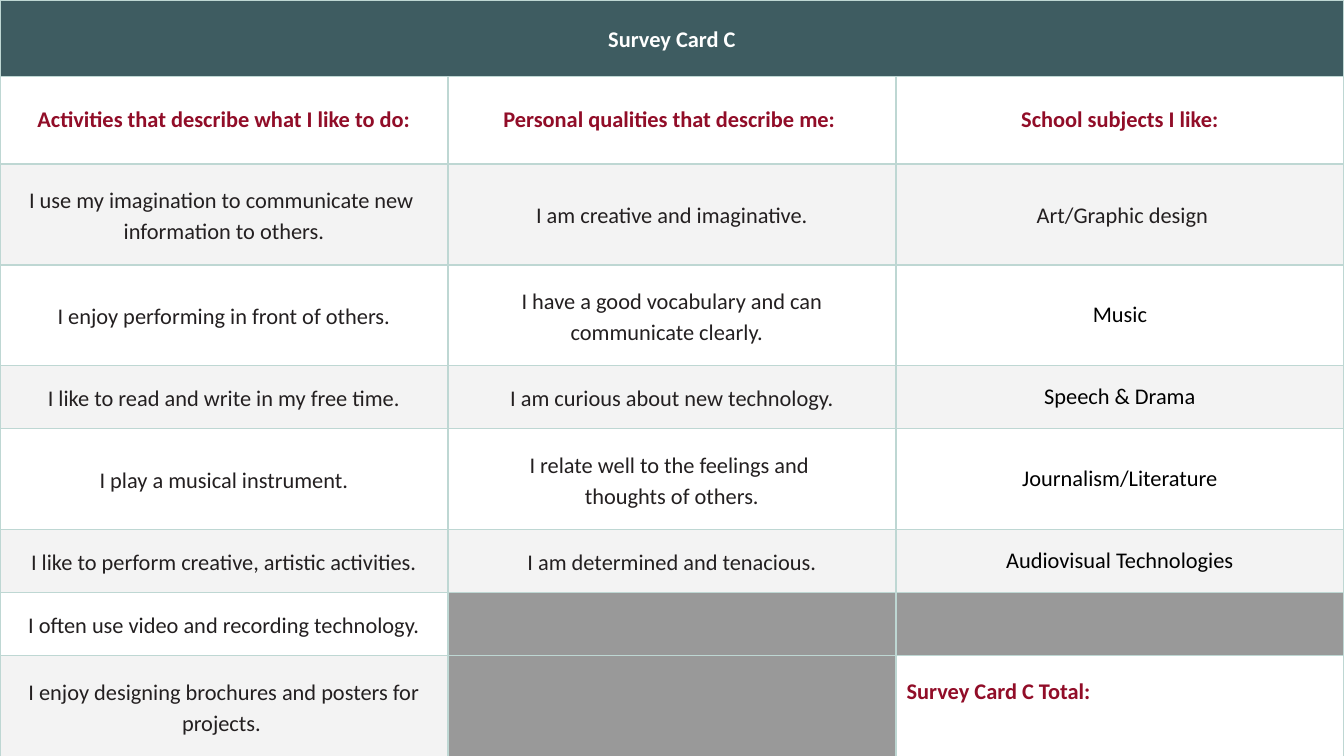
from dataclasses import dataclass
from typing import Optional

from lxml.etree import SubElement
from pptx import Presentation
from pptx.dml.color import RGBColor
from pptx.enum.text import MSO_ANCHOR, PP_ALIGN
from pptx.oxml.ns import qn
from pptx.util import Inches, Pt


@dataclass(frozen=True)
class Theme:
    font: str = "Calibri"
    size: float = 12
    edge: str = "BED7D3"
    bar: str = "3E5C61"
    band: str = "F3F3F3"
    white: str = "FFFFFF"
    block: str = "999999"
    accent: str = "910D28"
    body: str = "231F20"
    black: str = "000000"


@dataclass(frozen=True)
class Row:
    height: float
    texts: tuple[str, str, str]


THEME = Theme()
PAD = 0.08
WIDTH = 10
HEIGHT = WIDTH * 9 / 16
TITLE_HEIGHT = 0.57

HEADS = Row(0.65, ("Activities that describe what I like to do:",
                   "Personal qualities that describe me: ",
                   "School subjects I like:"))

# An empty text is a blocked-out cell
ROWS = [
    Row(0.75, ("I use my imagination to communicate new \ninformation to others.",
               "I am creative and imaginative.", " Art/Graphic design")),
    Row(0.75, ("I enjoy performing in front of others.",
               "I have a good vocabulary and can communicate clearly.  ", "Music")),
    Row(0.47, ("I like to read and write in my free time.",
               "I am curious about new technology.", "Speech & Drama")),
    Row(0.75, ("I play a musical instrument.",
               "I relate well to the feelings and \nthoughts of others.",
               "Journalism/Literature")),
    Row(0.47, ("I like to perform creative, artistic activities.",
               "I am determined and tenacious.", "Audiovisual Technologies")),
    Row(0.47, ("I often use video and recording technology.", "", "")),
    Row(0.75, ("I enjoy designing brochures and posters for projects. ", "",
               "Survey Card C Total:")),
]


def border(cell) -> None:
    """Draw a thin line on all four sides; call before setting the fill."""
    props = cell._tc.get_or_add_tcPr()
    for side in ("a:lnL", "a:lnR", "a:lnT", "a:lnB"):
        line = SubElement(props, qn(side), w=str(Pt(1)))
        fill = SubElement(line, qn("a:solidFill"))
        SubElement(fill, qn("a:srgbClr"), val=THEME.edge)


def paint(cell, color: str) -> None:
    border(cell)
    cell.fill.solid()
    cell.fill.fore_color.rgb = RGBColor.from_string(color)


def write(cell, text: str, *, color: str, bold: bool = False,
          align: PP_ALIGN = PP_ALIGN.CENTER, spacing: Optional[float] = None,
          before: float = 0, after: float = 0, bottom: float = PAD) -> None:
    cell.vertical_anchor = MSO_ANCHOR.MIDDLE
    cell.margin_left = cell.margin_right = cell.margin_top = Inches(PAD)
    cell.margin_bottom = Inches(bottom)
    cell.text = text
    for para in cell.text_frame.paragraphs:
        para.alignment = align
        para.line_spacing = spacing
        para.space_before, para.space_after = Pt(before), Pt(after)
        for run in para.runs:
            run.font.name, run.font.size = THEME.font, Pt(THEME.size)
            run.font.bold = bold
            run.font.color.rgb = RGBColor.from_string(color)


def fill_body(table) -> None:
    last = len(ROWS) - 1
    for i, row in enumerate(ROWS):
        for col, text in enumerate(row.texts):
            cell = table.cell(i + 2, col)
            total = i == last and col == 2
            if not text:
                paint(cell, THEME.block)
            elif total:
                # A deeper bottom margin lifts the label above the middle
                paint(cell, THEME.white)
                write(cell, text, color=THEME.accent, bold=True,
                      align=PP_ALIGN.LEFT, before=10, bottom=0.29)
            else:
                paint(cell, THEME.white if i % 2 else THEME.band)
                # Subjects below the first are black and single spaced
                plain = col == 2 and i > 0
                write(cell, text, color=THEME.black if plain else THEME.body,
                      spacing=None if plain else 1.15)


def main() -> None:
    deck = Presentation()
    deck.slide_width, deck.slide_height = Inches(WIDTH), Inches(HEIGHT)
    slide = deck.slides.add_slide(deck.slide_layouts[6])

    # Table grid
    heights = [TITLE_HEIGHT, HEADS.height] + [row.height for row in ROWS]
    table = slide.shapes.add_table(len(heights), 3, 0, 0, Inches(WIDTH),
                                   Inches(HEIGHT)).table
    table.first_row = table.horz_banding = False
    for row, height in zip(table.rows, heights):
        row.height = Inches(height)

    # Title bar
    for col in range(3):
        paint(table.cell(0, col), THEME.bar)
    title = table.cell(0, 0)
    title.merge(table.cell(0, 2))
    write(title, "Survey Card C", color=THEME.white, bold=True,
          spacing=1.15, after=6)

    # Column heads
    for col, text in enumerate(HEADS.texts):
        cell = table.cell(1, col)
        paint(cell, THEME.white)
        write(cell, text, color=THEME.accent, bold=True, before=10)

    fill_body(table)
    deck.save("out.pptx")


if __name__ == "__main__":
    main()
